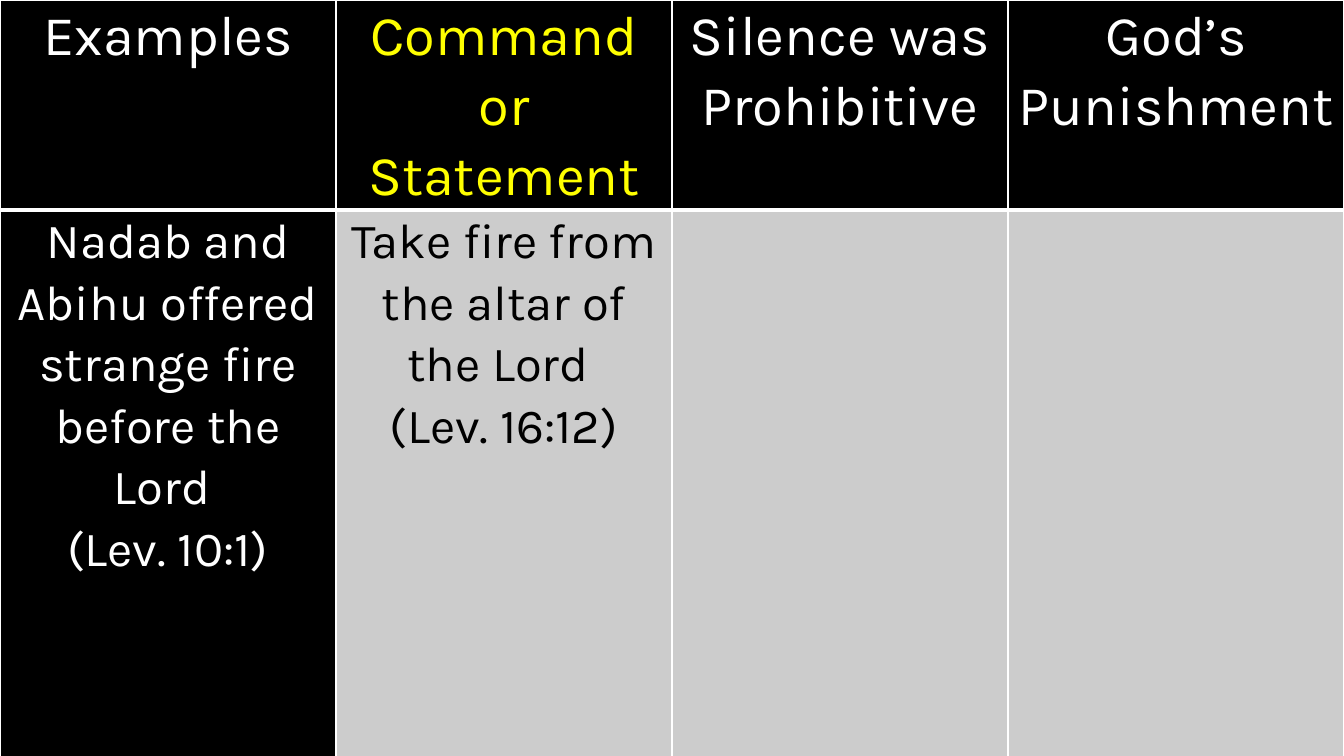
from lxml import etree
from pptx import Presentation
from pptx.dml.color import RGBColor
from pptx.enum.text import PP_ALIGN
from pptx.oxml.ns import qn
from pptx.util import Inches, Pt

CENTER = PP_ALIGN.CENTER
BLACK = RGBColor(0x00, 0x00, 0x00)
WHITE = RGBColor(0xFF, 0xFF, 0xFF)
YELLOW = RGBColor(0xFF, 0xFF, 0x00)
GRAY = RGBColor(0xCC, 0xCC, 0xCC)

HEADS = [
    ("Examples", WHITE),
    ("Command or Statement", YELLOW),
    ("Silence was Prohibitive", WHITE),
    ("God’s Punishment", WHITE),
]
CASES = [
    ("Nadab and Abihu offered strange fire before the Lord \n(Lev. 10:1)", WHITE, BLACK),
    ("Take fire from the altar of the Lord \n(Lev. 16:12)", BLACK, GRAY),
    ("", BLACK, GRAY),
    ("", BLACK, GRAY),
]
SHARES = [1.75 / 7.5, 5.75 / 7.5]


def write(frame, text, size, color, font="Karla", align=CENTER, space=1.07):
    for i, line in enumerate(text.split("\n")):
        para = frame.paragraphs[0] if i == 0 else frame.add_paragraph()
        para.alignment = align
        para.line_spacing = space
        run = para.add_run()
        run.text = line
        run.font.name = font
        run.font.size = Pt(size)
        run.font.color.rgb = color


class Board:
    def __init__(self, deck):
        self.wide = deck.slide_width
        self.high = deck.slide_height
        self.slide = deck.slides.add_slide(deck.slide_layouts[6])
        back = self.slide.background.fill
        back.solid()
        back.fore_color.rgb = BLACK

    def table(self, cols, shares):
        frame = self.slide.shapes.add_table(len(shares), cols, 0, 0, self.wide, self.high)
        grid = frame.table
        for row, share in zip(grid.rows, shares):
            row.height = round(self.high * share)
        return grid

    def edge(self, cell, **widths):
        props = cell._tc.get_or_add_tcPr()
        for side, width in widths.items():
            line = etree.SubElement(props, qn(f"a:ln{side}"), w=str(Pt(width)))
            fill = etree.SubElement(line, qn("a:solidFill"))
            etree.SubElement(fill, qn("a:srgbClr"), val=str(WHITE))

    def cell(self, cell, text, size, color, fill, top=1, base=1):
        cell.margin_left = cell.margin_right = Inches(0.07)
        cell.margin_top = cell.margin_bottom = 0
        self.edge(cell, L=1, R=1, T=top, B=base)
        cell.fill.solid()
        cell.fill.fore_color.rgb = fill
        if text:
            write(cell.text_frame, text, size, color)


def main():
    deck = Presentation()
    deck.slide_width = Inches(13.33)
    deck.slide_height = Inches(7.5)
    board = Board(deck)
    grid = board.table(len(HEADS), SHARES)
    for col, (text, color) in enumerate(HEADS):
        board.cell(grid.cell(0, col), text, 40, color, BLACK, base=3)
    for col, (text, color, fill) in enumerate(CASES):
        board.cell(grid.cell(1, col), text, 35, color, fill, top=3)
    deck.save("out.pptx")


if __name__ == "__main__":
    main()
